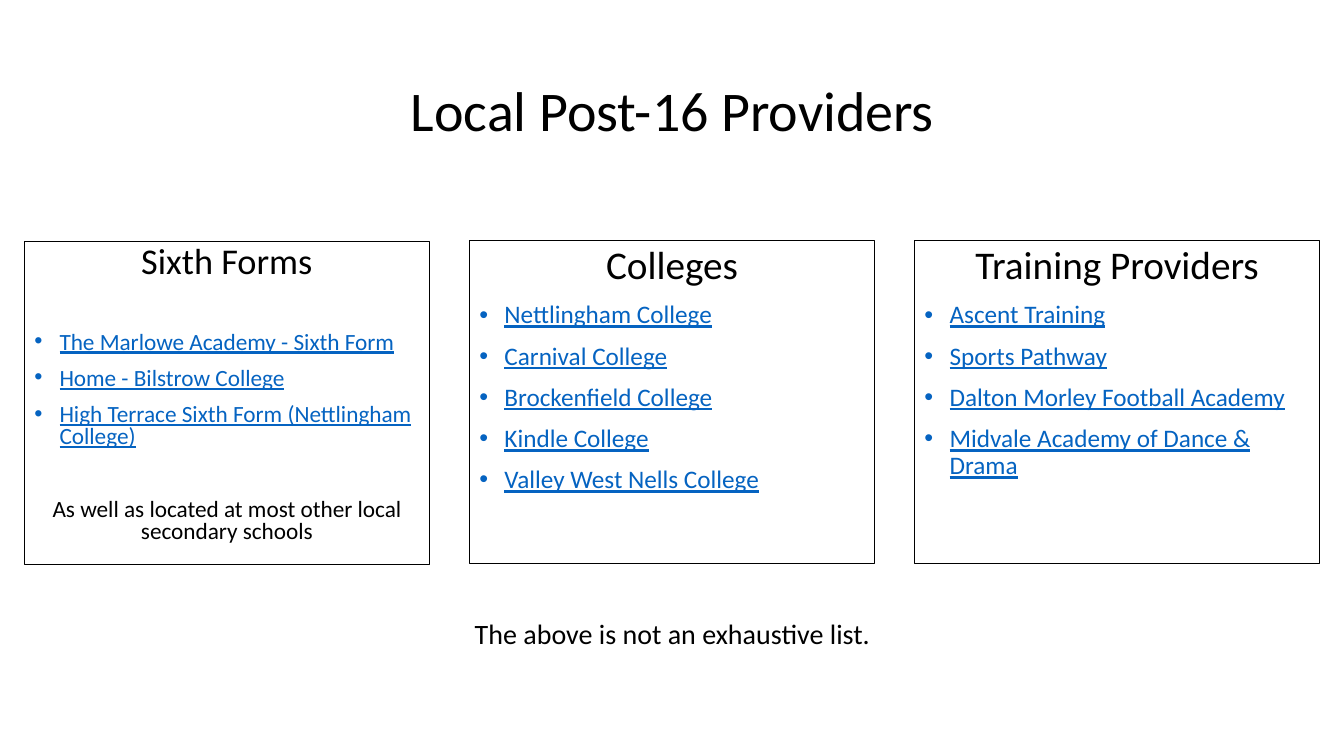
import pptx
import pptx.util
import pptx.dml.color
import pptx.enum.shapes
import pptx.enum.text
import pptx.oxml
import pptx.oxml.ns

Inches, Pt = pptx.util.Inches, pptx.util.Pt
RGBColor = pptx.dml.color.RGBColor
PP_ALIGN = pptx.enum.text.PP_ALIGN
MSO_ANCHOR = pptx.enum.text.MSO_ANCHOR

BLACK = RGBColor(0x00, 0x00, 0x00)
LINK_BLUE = RGBColor(0x05, 0x63, 0xC1)
FONT = "Calibri"

TITLE = "Local Post-16 Providers"
FOOTNOTE = "The above is not an exhaustive list."
PROVIDERS = [
    {
        "heading": "Sixth Forms",
        "names": [
            "The Marlowe Academy - Sixth Form",
            "Home - Bilstrow College",
            "High Terrace Sixth Form (Nettlingham College)",
        ],
        "note": "As well as located at most other local secondary schools",
        "top": 2.4, "heading_size": 25.9, "size": 16.6, "spacing": 0.8, "gap": 36,
    },
    {
        "heading": "Colleges",
        "names": [
            "Nettlingham College",
            "Carnival College",
            "Brockenfield College",
            "Kindle College",
            "Valley West Nells College",
        ],
        "top": 2.39, "heading_size": 28, "size": 18, "spacing": 0.9, "gap": 10,
    },
    {
        "heading": "Training Providers",
        "names": [
            "Ascent Training",
            "Sports Pathway",
            "Dalton Morley Football Academy",
            "Midvale Academy of Dance & Drama",
        ],
        "top": 2.39, "heading_size": 28, "size": 18, "spacing": 0.9, "gap": 10,
    },
]
BOX_LEFT, BOX_PITCH, BOX_WIDTH, BOX_HEIGHT = 0.24, 4.415, 4.02, 3.2


def add_text(frame, text, size, color=BLACK, underline=None, bullet=False,
             align=PP_ALIGN.CENTER, spacing=0.9, before=10):
    """Write text in the frame's empty first paragraph, or in a new one."""
    first = frame.paragraphs[0]
    paragraph = frame.add_paragraph() if first.runs else first
    paragraph.alignment = align
    paragraph.line_spacing = spacing
    paragraph.space_before = Pt(before)
    paragraph.space_after = Pt(0)
    properties = paragraph._p.get_or_add_pPr()
    indent = Inches(0.25) if bullet else 0
    properties.set("marL", str(indent))
    properties.set("indent", str(-indent))
    if bullet:
        font = pptx.oxml.ns.qn("a:buFont")
        properties.append(properties.makeelement(font, {"typeface": "Arial"}))
    marker = pptx.oxml.ns.qn("a:buChar" if bullet else "a:buNone")
    properties.append(properties.makeelement(marker, {"char": "•"} if bullet else {}))
    run = paragraph.add_run()
    run.text = text
    run.font.name = FONT
    run.font.size = Pt(size)
    run.font.color.rgb = color
    run.font.underline = underline


def place(shape, left, top, width, height, anchor=MSO_ANCHOR.TOP):
    shape.left, shape.top = Inches(left), Inches(top)
    shape.width, shape.height = Inches(width), Inches(height)
    frame = shape.text_frame
    frame.word_wrap = True
    frame.auto_size = pptx.enum.text.MSO_AUTO_SIZE.NONE
    frame.vertical_anchor = anchor
    return frame


def fill_provider_box(shape, column, provider):
    shape.fill.background()
    shape.line.color.rgb = BLACK
    shape.line.width = Pt(0.75)
    frame = place(shape, BOX_LEFT + column * BOX_PITCH, provider["top"],
                  BOX_WIDTH, BOX_HEIGHT)
    size, spacing, gap = provider["size"], provider["spacing"], provider["gap"]
    add_text(frame, provider["heading"], provider["heading_size"], spacing=spacing)
    for index, name in enumerate(provider["names"]):
        add_text(frame, name, size, color=LINK_BLUE, underline=True, bullet=True,
                 align=PP_ALIGN.LEFT, spacing=spacing, before=10 if index else gap)
    if "note" in provider:
        add_text(frame, provider["note"], size, spacing=spacing, before=gap)


def main():
    presentation = pptx.Presentation()
    presentation.slide_width, presentation.slide_height = Inches(13.33), Inches(7.5)
    slide = presentation.slides.add_slide(presentation.slide_layouts[1])

    title = place(slide.shapes.title, 0.92, 0.4, 11.5, 1.45, MSO_ANCHOR.MIDDLE)
    add_text(title, TITLE, 40, before=0)

    for column, provider in enumerate(PROVIDERS):
        if column == 0:
            box = slide.placeholders[1]
        else:
            box = slide.shapes.add_shape(
                pptx.enum.shapes.MSO_SHAPE.RECTANGLE, 0, 0, 0, 0)
            box.shadow.inherit = False
        fill_provider_box(box, column, provider)

    footnote = place(slide.shapes.add_textbox(0, 0, 0, 0), 3.52, 6.1, 6.3, 0.74)
    add_text(footnote, FOOTNOTE, 20)
    presentation.save("out.pptx")


if __name__ == "__main__":
    main()
